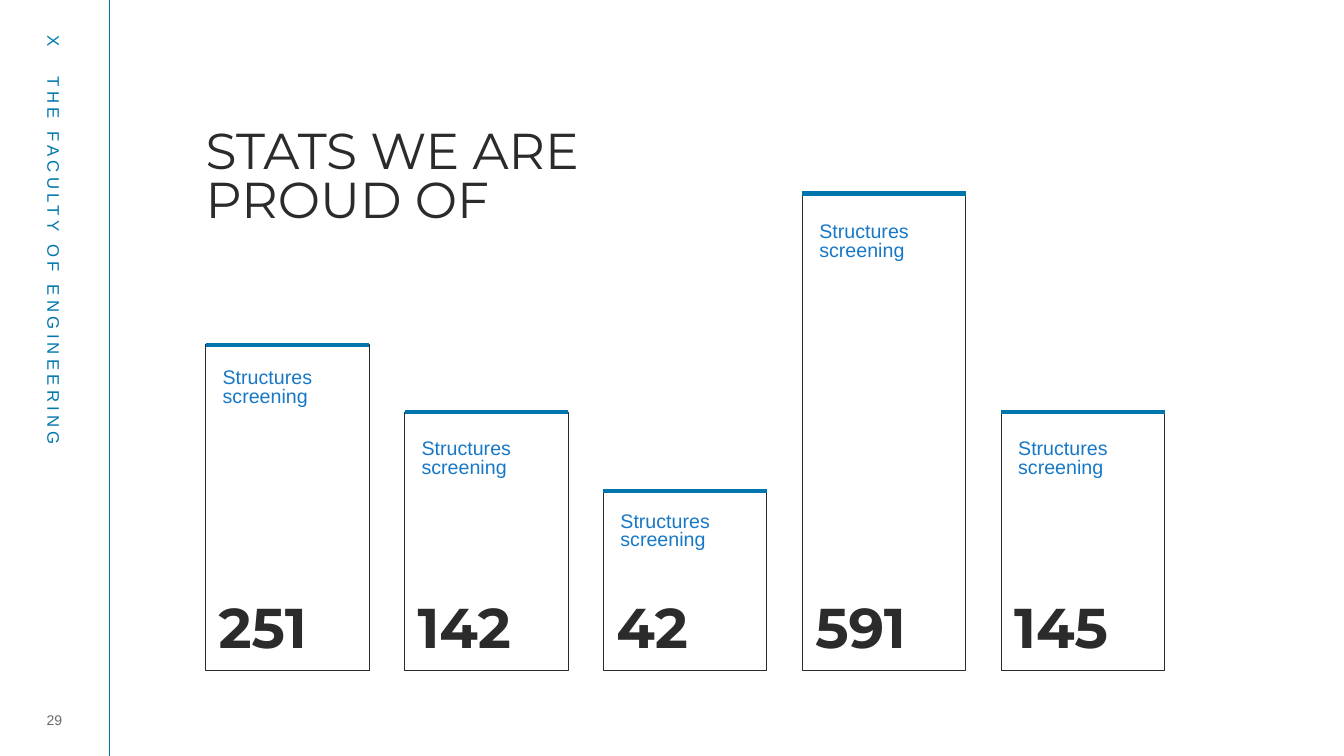
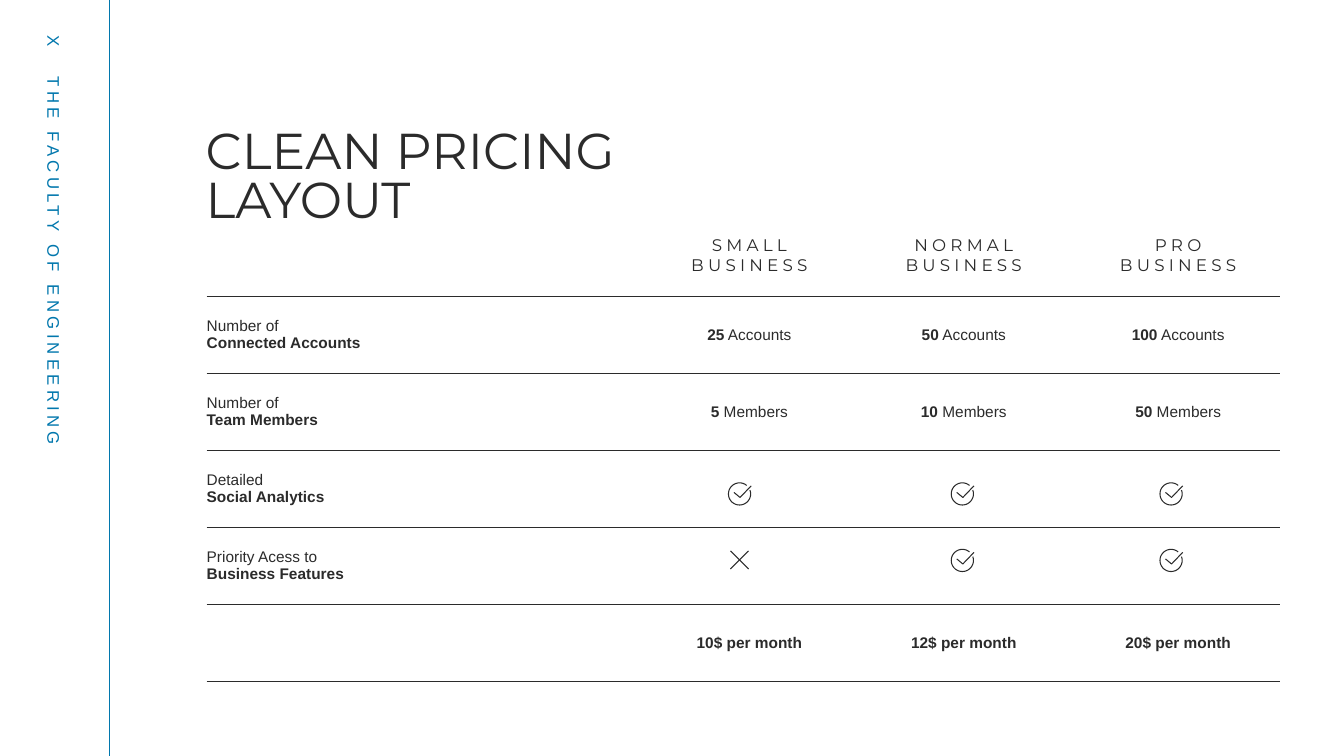
from math import cos, radians, sin

from lxml import etree
from pptx import Presentation
from pptx.dml.color import RGBColor
from pptx.enum.shapes import MSO_CONNECTOR, MSO_SHAPE
from pptx.enum.text import MSO_ANCHOR, MSO_AUTO_SIZE, PP_ALIGN
from pptx.oxml.ns import qn
from pptx.util import Inches, Pt

STRAIGHT = MSO_CONNECTOR.STRAIGHT
RECTANGLE = MSO_SHAPE.RECTANGLE
TOP, MIDDLE, BOTTOM = MSO_ANCHOR.TOP, MSO_ANCHOR.MIDDLE, MSO_ANCHOR.BOTTOM
LEFT, CENTER = PP_ALIGN.LEFT, PP_ALIGN.CENTER
NO_AUTOFIT = MSO_AUTO_SIZE.NONE

INK = RGBColor(0x2B, 0x2B, 0x2B)
GRAY = RGBColor(0x6B, 0x6B, 0x6B)
BAND_BLUE = RGBColor(0x01, 0x77, 0xAD)
CAP_BLUE = RGBColor(0x01, 0x76, 0xAD)
LABEL_BLUE = RGBColor(0x17, 0x78, 0xC7)

TITLE_STYLE = {"name": "Montserrat", "size": Pt(36), "color": INK, "bold": False}
BAND_STYLE = {"name": "Arial", "size": Pt(12), "color": BAND_BLUE, "tracking": 300}
PAGE_STYLE = {"name": "Arial", "size": Pt(10), "color": GRAY}
LABEL_STYLE = {"name": "Arial", "size": Pt(14), "color": LABEL_BLUE}
NUMBER_STYLE = {"name": "Montserrat", "size": Pt(40), "color": INK, "bold": True}
PLAN_STYLE = {"name": "Montserrat", "size": Pt(12), "color": INK, "bold": False, "tracking": 300}
CELL_STYLE = {"name": "Arial", "size": Pt(11), "color": INK}

BAND_TEXT = "X\tTHE FACULTY OF ENGINEERING"
STATS_TITLE = "STATS WE ARE PROUD OF"
STATS_PAGE = "29"
BAR_LABEL = ["Structures", "screening"]
BARS = [
    ("251", 3.42, 3.62),
    ("142", 4.09, 4.32),
    ("42", 4.87, 5.04),
    ("591", 1.92, 2.17),
    ("145", 4.09, 4.32),
]
BAR_LEFT, BAR_LAST, BAR_WIDTH, BAR_BOTTOM = 2.04, 9.93, 1.62, 6.65

PRICING_TITLE = "CLEAN PRICING LAYOUT"
PLANS = ["SMALL", "NORMAL", "PRO"]
FEATURES = [
    ("Number of", "Connected Accounts", [("25", " Accounts"), ("50", " Accounts"), ("100", " Accounts")]),
    ("Number of", "Team Members", [("5", " Members"), ("10", " Members"), ("50", " Members")]),
    ("Detailed", "Social Analytics", ["check", "check", "check"]),
    ("Priority Acess to", "Business Features", ["cross", "check", "check"]),
]
PRICES = ["10$ per month", "12$ per month", "20$ per month"]
TABLE_WIDTH, TABLE_HEIGHT, NAME_WIDTH, HEADER_HEIGHT = 10.65, 5.46, 4.27, 1.64
ICON_LEFTS = [7.22, 9.43, 11.5]
ICON_TOPS = {3: 4.78, 4: 5.44}
RING = [(0.115 + 0.11 * cos(radians(angle)), 0.12 + 0.11 * sin(radians(angle)))
        for angle in range(-20, 320, 10)]
ICONS = {
    "check": [RING, [(0.06, 0.105), (0.12, 0.155), (0.23, 0.04)]],
    "cross": [[(0.025, 0.025), (0.205, 0.205)], [(0.205, 0.025), (0.025, 0.205)]],
}


def box(*lengths):
    return [Inches(length) for length in lengths]


def format_run(run, style):
    for key, value in style.items():
        if key == "color":
            run.font.color.rgb = value
        elif key == "tracking":
            run._r.get_or_add_rPr().set("spc", str(value))
        else:
            setattr(run.font, key, value)


def write(frame, lines, style, **paragraph_format):
    for index, line in enumerate(lines):
        paragraph = frame.add_paragraph() if index else frame.paragraphs[0]
        for key, value in paragraph_format.items():
            setattr(paragraph, key, value)
        for text, changes in ([(line, {})] if isinstance(line, str) else line):
            run = paragraph.add_run()
            run.text = text
            format_run(run, {**style, **changes})


def set_margins(target, left, top, right, bottom):
    target.margin_left, target.margin_top, target.margin_right, target.margin_bottom = box(
        left, top, right, bottom)


def add_text(slide, place, lines, style, **paragraph_format):
    shape = slide.shapes.add_textbox(*box(*place))
    shape.text_frame.word_wrap = True
    write(shape.text_frame, lines, style, **paragraph_format)
    return shape


def add_line(slide, ends, color, width):
    connector = slide.shapes.add_connector(STRAIGHT, *box(*ends))
    connector.line.color.rgb = color
    connector.line.width = Pt(width)
    etree.SubElement(connector.element.spPr, qn("a:effectLst"))
    return connector


def outline(shape, width):
    shape.shadow.inherit = False
    shape.fill.background()
    shape.line.color.rgb = INK
    shape.line.width = Pt(width)


def add_band(slide, layout):
    rule = add_line(slide, (1.08, 0, 1.08, 7.5), BAND_BLUE, 0.5)
    label = add_text(slide, (-2.3, 2.94, 5.67, 0.3), [BAND_TEXT], BAND_STYLE)
    label.rotation = 90
    properties = label.text_frame.paragraphs[0]._p.get_or_add_pPr()
    tabs = etree.SubElement(properties, qn("a:tabLst"))
    etree.SubElement(tabs, qn("a:tab"), pos=str(Inches(0.41)), algn="l")
    for number, shape in enumerate((rule, label), 20):
        shape.element.xpath(".//p:cNvPr")[0].set("id", str(number))
        layout.shapes.element.append(shape.element)


def add_title(slide, text):
    title = slide.shapes.title
    title.left, title.top, title.width, title.height = box(2.04, 1.09, 4.62, 1.77)
    frame = title.text_frame
    for key, value in {"auto_size": NO_AUTOFIT, "word_wrap": True, "vertical_anchor": TOP}.items():
        setattr(frame, key, value)
    set_margins(frame, 0, 0.21, 0, 0)
    write(frame, [text], TITLE_STYLE, alignment=LEFT, line_spacing=0.8)


def add_bar(slide, index, number, top, label_top):
    left = BAR_LEFT + index * (BAR_LAST - BAR_LEFT) / (len(BARS) - 1)
    bar = slide.shapes.add_shape(RECTANGLE, *box(left, top, BAR_WIDTH, BAR_BOTTOM - top))
    outline(bar, 0.5)
    add_line(slide, (left, top, left + BAR_WIDTH, top), CAP_BLUE, 3)
    add_text(slide, (left + 0.07, label_top, 1.55, 0.93), BAR_LABEL, LABEL_STYLE, line_spacing=0.8)
    add_text(slide, (left + 0.03, 5.96, 1.59, 0.56), [number], NUMBER_STYLE, line_spacing=0.8)


def add_icon(slide, name, left, top):
    strokes = [[box(left + x, top + y) for x, y in stroke] for stroke in ICONS[name]]
    builder = slide.shapes.build_freeform(*strokes[0][0], scale=1.0)
    for index, stroke in enumerate(strokes):
        if index:
            builder.move_to(*stroke[0])
        builder.add_line_segments(stroke[1:], close=False)
    outline(builder.convert_to_shape(), 0.75)


def set_borders(cell, top, bottom):
    properties = cell._tc.get_or_add_tcPr()
    widths = {"a:lnL": 0, "a:lnR": 0, "a:lnT": top, "a:lnB": bottom}
    for index, (tag, width) in enumerate(widths.items()):
        border = etree.Element(qn(tag), w=str(Pt(width)))
        if width:
            fill = etree.SubElement(border, qn("a:solidFill"))
            etree.SubElement(fill, qn("a:srgbClr"), val=str(INK))
        else:
            etree.SubElement(border, qn("a:noFill"))
        properties.insert(index, border)


def fill_cell(cell, lines, style, margins, alignment, anchor=MIDDLE):
    set_margins(cell, *margins)
    cell.vertical_anchor = anchor
    write(cell.text_frame, lines, style, alignment=alignment)


def add_pricing(slide):
    bold = {"bold": True}
    plain = {"bold": False}
    last = len(FEATURES) + 1
    frame = slide.shapes.add_table(last + 1, len(PLANS) + 1,
                                   *box(2.05, 1.3, TABLE_WIDTH, TABLE_HEIGHT))
    table = frame.table
    table.first_row = table.horz_banding = False
    for index, column in enumerate(table.columns):
        column.width = Inches((TABLE_WIDTH - NAME_WIDTH) / len(PLANS) if index else NAME_WIDTH)
    for index, row in enumerate(table.rows):
        row.height = Inches((TABLE_HEIGHT - HEADER_HEIGHT) / last if index else HEADER_HEIGHT)
        for cell in row.cells:
            cell.fill.background()
            set_borders(cell, 0.5 if index else 0, 1 if index == last else 0.5)

    value_margins = (0.1, 0.05, 0, 0.05)
    for index, (plan, price) in enumerate(zip(PLANS, PRICES), 1):
        fill_cell(table.cell(0, index), [plan, "BUSINESS"], PLAN_STYLE, (0.1, 0, 0, 0.2), CENTER, BOTTOM)
        fill_cell(table.cell(last, index), [[(price, bold)]], CELL_STYLE, value_margins, CENTER)
    for row, (lead, name, values) in enumerate(FEATURES, 1):
        fill_cell(table.cell(row, 0), [[(lead, plain)], [(name, bold)]], CELL_STYLE,
                  (0, 0.05, 0.1, 0.05), LEFT)
        for column, value in enumerate(values, 1):
            if row in ICON_TOPS:
                add_icon(slide, value, ICON_LEFTS[column - 1], ICON_TOPS[row])
            else:
                amount, unit = value
                fill_cell(table.cell(row, column), [[(amount, bold), (unit, plain)]], CELL_STYLE,
                          value_margins, CENTER)


def main():
    presentation = Presentation()
    presentation.slide_width, presentation.slide_height = box(13.33, 7.5)
    layout = presentation.slide_layouts[5]

    stats = presentation.slides.add_slide(layout)
    add_band(stats, layout)
    add_title(stats, STATS_TITLE)
    page = add_text(stats, (0.26, 7.02, 0.56, 0.25), [STATS_PAGE], PAGE_STYLE, alignment=CENTER)
    set_margins(page.text_frame, 0, 0, 0, 0)
    page.text_frame.vertical_anchor = MIDDLE
    for index, bar in enumerate(BARS):
        add_bar(stats, index, *bar)

    pricing = presentation.slides.add_slide(layout)
    add_title(pricing, PRICING_TITLE)
    add_pricing(pricing)

    presentation.save("out.pptx")


if __name__ == "__main__":
    main()
